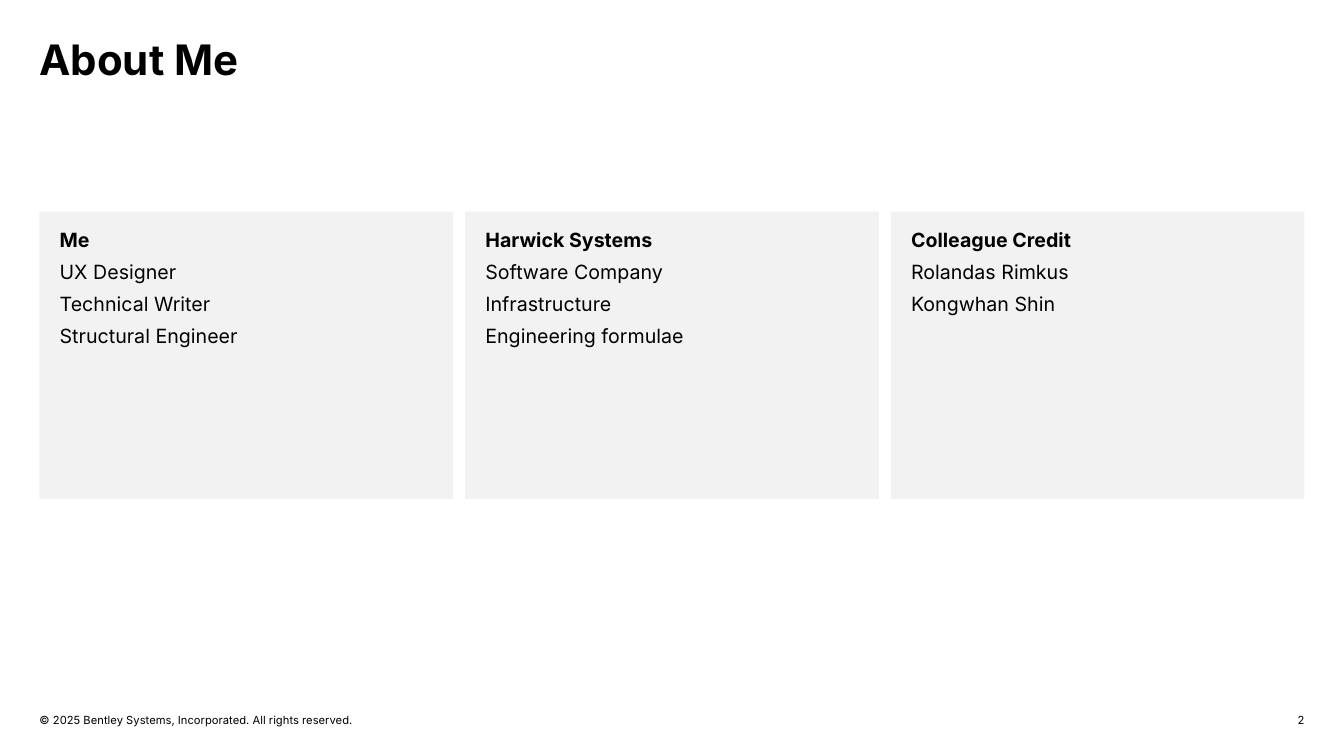
"""Build the About Me slide with three fact cards."""
from pptx import Presentation
from pptx.dml.color import RGBColor
from pptx.enum.shapes import MSO_SHAPE
from pptx.enum.text import MSO_ANCHOR, PP_ALIGN
from pptx.util import Pt

BLACK = RGBColor(0x00, 0x00, 0x00)
GREY = RGBColor(0xF2, 0xF2, 0xF2)
WHITE = RGBColor(0xFF, 0xFF, 0xFF)

LEFT = 28.2
WIDTH = 903.6
GAP = 8.6
CARDS = [
    ("Me", "UX Designer", "Technical Writer", "Structural Engineer"),
    ("Harwick Systems", "Software Company", "Infrastructure", "Engineering formulae"),
    ("Colleague Credit", "Rolandas Rimkus", "Kongwhan Shin"),
]


class Page:
    """Holds the style and the current slide."""

    font = "Inter"

    def __init__(self, slide):
        self.slide = slide
        fill = slide.background.fill
        fill.solid()
        fill.fore_color.rgb = WHITE

    def frame(self, shape, inset, anchor):
        """Set up and return the text frame of a shape."""
        frame = shape.text_frame
        frame.word_wrap = True
        frame.vertical_anchor = anchor
        left, top, right, base = inset
        frame.margin_left, frame.margin_top = Pt(left), Pt(top)
        frame.margin_right, frame.margin_bottom = Pt(right), Pt(base)
        return frame

    def run(self, para, text, size, bold=False):
        """Add one styled run to a paragraph."""
        run = para.add_run()
        run.text = text
        run.font.name = self.font
        run.font.size = Pt(size)
        run.font.bold = bold
        run.font.color.rgb = BLACK

    def label(self, box, text, size, bold=False, align=PP_ALIGN.LEFT,
              anchor=MSO_ANCHOR.TOP, space=1.0):
        """Add a text box with a single line."""
        shape = self.slide.shapes.add_textbox(*map(Pt, box))
        para = self.frame(shape, (0, 0, 0, 0), anchor).paragraphs[0]
        para.alignment = align
        para.line_spacing = space
        self.run(para, text, size, bold)

    def card(self, box, lines):
        """Add a filled card whose first line is a bold heading."""
        shape = self.slide.shapes.add_shape(MSO_SHAPE.RECTANGLE, *map(Pt, box))
        shape.shadow.inherit = False
        shape.fill.solid()
        shape.fill.fore_color.rgb = GREY
        shape.line.fill.background()
        frame = self.frame(shape, (14.4, 11.5, 14.4, 14.4), MSO_ANCHOR.TOP)
        for row, text in enumerate(lines):
            para = frame.add_paragraph() if row else frame.paragraphs[0]
            para.alignment = PP_ALIGN.LEFT
            para.space_after = Pt(6)
            self.run(para, text, 14, bold=row == 0)


def main():
    """Draw the slide and save it."""
    deck = Presentation()
    deck.slide_width, deck.slide_height = Pt(960), Pt(540)
    page = Page(deck.slides.add_slide(deck.slide_layouts[6]))

    page.label((LEFT, 28.2, WIDTH, 43.2), "About Me", 30, bold=True, space=0.9)

    wide = (WIDTH - GAP * (len(CARDS) - 1)) / len(CARDS)
    for col, lines in enumerate(CARDS):
        page.card((LEFT + col * (wide + GAP), 151.2, wide, 205.2), lines)

    page.label((LEFT, 509.8, 409, 9.4),
               "© 2025 Bentley Systems, Incorporated. All rights reserved.",
               8, anchor=MSO_ANCHOR.BOTTOM)
    page.label((LEFT + WIDTH - 48, 509.8, 48, 9.4), "2", 8,
               align=PP_ALIGN.RIGHT, anchor=MSO_ANCHOR.BOTTOM)

    deck.save("out.pptx")


if __name__ == "__main__":
    main()
